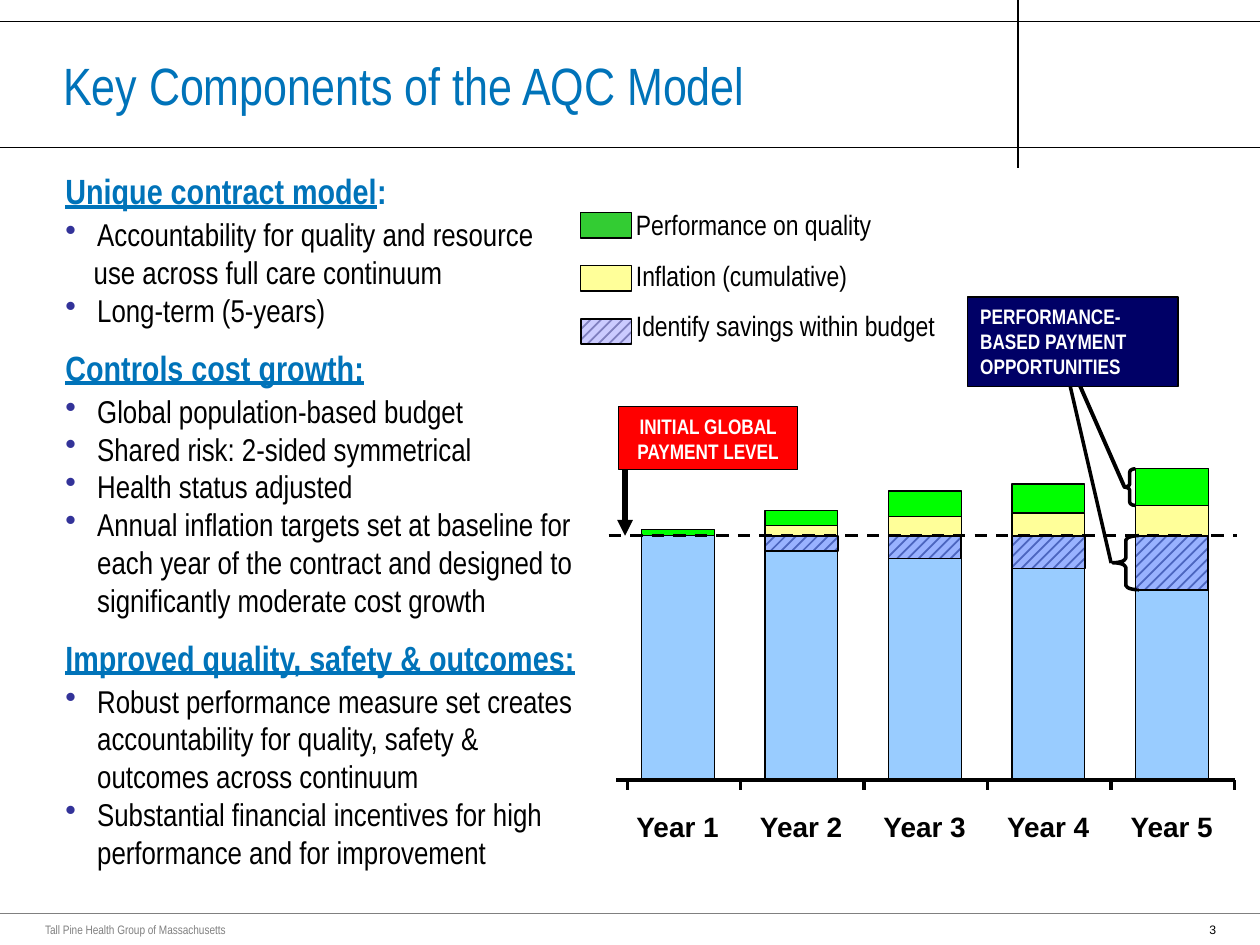
from lxml import etree
from pptx import Presentation
from pptx.dml.color import RGBColor
from pptx.enum import dml, shapes, text
from pptx.oxml.ns import qn
from pptx.util import Cm, Pt

BLACK = RGBColor(0, 0, 0)
WHITE = RGBColor(255, 255, 255)
GREY = RGBColor(128, 128, 128)
BLUE = RGBColor(0, 0x73, 0xB9)
DOT = "333399"
SKY = RGBColor(0x99, 0xCC, 0xFF)
CREAM = RGBColor(0xFF, 0xFF, 0x99)
LIME = RGBColor(0, 0xFF, 0)
GREEN = RGBColor(0x33, 0xCC, 0x33)
RED = RGBColor(0xFF, 0, 0)
NAVY = RGBColor(0, 0, 0x66)
INK = RGBColor(0, 0, 0x80)
LILAC = RGBColor(0x99, 0x99, 0xFF)
HATCH = "hatch"
THIN = "Arial Narrow"

TITLE = "Key Components of the AQC Model"
FOOT = "Tall Pine Health Group of Massachusetts"
TOPICS = [
    ("Unique contract model", ":", [
        ("•", "Accountability for quality and resource"),
        ("", "use across full care continuum"),
        ("•", "Long-term (5-years)")]),
    ("Controls cost growth:", "", [
        ("•", "Global population-based budget"),
        ("•", "Shared risk: 2-sided symmetrical"),
        ("•", "Health status adjusted"),
        ("•", "Annual inflation targets set at baseline for each year of the "
              "contract and designed to significantly moderate cost growth")]),
    ("Improved quality, safety & outcomes:", "", [
        ("•", "Robust performance measure set creates accountability for "
              "quality, safety & outcomes across continuum"),
        ("•", "Substantial financial incentives for high performance and "
              "for improvement")]),
]
LEGEND = [("Performance on quality", GREEN),
          ("Inflation (cumulative)", CREAM),
          ("Identify savings within budget", HATCH)]
YEARS = [("Year 1", 0.13, 0, 0), ("Year 2", 0.31, 0.2, 0.31),
         ("Year 3", 0.52, 0.38, 0.46), ("Year 4", 0.58, 0.46, 0.66),
         ("Year 5", 0.74, 0.61, 1.09)]
LEFT, STEP, WIDE = 12.93, 2.49, 1.47
BASE, FLOOR, END = 10.8, 15.72, 24.89

deck = Presentation()
deck.slide_width, deck.slide_height = Cm(25.4), Cm(19.05)
slide = deck.slides.add_slide(deck.slide_layouts[5])
items = slide.shapes


def rule(x1, y1, x2, y2, width=0.75, color=BLACK):
    line = items.add_connector(shapes.MSO_CONNECTOR.STRAIGHT,
                               Cm(x1), Cm(y1), Cm(x2), Cm(y2))
    line.line.color.rgb = color
    line.line.width = Pt(width)
    etree.SubElement(line.element.spPr, qn("a:effectLst"))
    return line


def shape(kind, x, y, w, h, fill=None, width=0.75):
    item = items.add_shape(kind, Cm(x), Cm(y), Cm(w), Cm(h))
    item.shadow.inherit = False
    item.line.color.rgb = BLACK
    item.line.width = Pt(width)
    if fill is None:
        item.fill.background()
    elif fill == HATCH:
        item.line.width = Pt(1)
        item.fill.patterned()
        item.fill.pattern = dml.MSO_PATTERN.PERCENT_20
        item.fill.fore_color.rgb = INK
        item.fill.back_color.rgb = LILAC
        for tint in item.element.spPr.find(qn("a:pattFill")).iter(qn("a:srgbClr")):
            etree.SubElement(tint, qn("a:alpha"), val="50000")
    else:
        item.fill.solid()
        item.fill.fore_color.rgb = fill
    return item


def rect(*args):
    return shape(shapes.MSO_SHAPE.RECTANGLE, *args)


def write(para, words, size, color, face=THIN, bold=False, under=False):
    run = para.add_run()
    run.text = words
    font = run.font
    font.size, font.name = Pt(size), face
    font.bold, font.underline = bold, under
    font.color.rgb = color


def frame(x, y, w, h, pad=None, wrap=True):
    body = items.add_textbox(Cm(x), Cm(y), Cm(w), Cm(h)).text_frame
    body.word_wrap = wrap
    if pad is not None:
        inset(body, pad)
    return body


def inset(body, pad):
    body.margin_left = body.margin_right = Cm(pad)
    body.margin_top = body.margin_bottom = Cm(pad)


def paras(body):
    yield body.paragraphs[0]
    while True:
        yield body.add_paragraph()


def indent(para, left, first=0, mark=""):
    props = para._p.get_or_add_pPr()
    props.set("marL", str(Cm(left)))
    props.set("indent", str(Cm(first)))
    if mark:
        tint = etree.SubElement(props, qn("a:buClr"))
        etree.SubElement(tint, qn("a:srgbClr"), val=DOT)
        etree.SubElement(props, qn("a:buChar"), char=mark)
    else:
        etree.SubElement(props, qn("a:buNone"))


rule(20.52, 0, 20.52, 3.38)
rule(0, 18.42, 25.4, 18.42, 0.5, GREY)
rule(0, 0.43, 25.4, 0.43)
rule(0, 2.97, 25.4, 2.97)
write(frame(24.13, 18.47, 0.86, 0.56).paragraphs[0], "3", 7, BLACK, "Arial")
write(frame(0.66, 18.47, 4.22, 0.56, wrap=False).paragraphs[0], FOOT, 7, GREY)

head = items.title
head.left, head.top, head.width, head.height = Cm(1.27), Cm(0.43), Cm(19.25), Cm(2.54)
body = head.text_frame
inset(body, 0)
body.auto_size = text.MSO_AUTO_SIZE.NONE
body.vertical_anchor = text.MSO_ANCHOR.MIDDLE
body.paragraphs[0].alignment = text.PP_ALIGN.LEFT
write(body.paragraphs[0], TITLE, 30, BLUE)

lines = paras(frame(1.07, 3.3, 11, 14.58))
for n, (name, tail, points) in enumerate(TOPICS):
    para = next(lines)
    indent(para, 0.64, -0.64)
    para.space_after = Pt(2)
    if n:
        para.space_before = Pt(10)
    write(para, name, 20, BLUE, bold=True, under=True)
    if tail:
        write(para, tail, 20, BLUE, bold=True)
    for mark, words in points:
        para = next(lines)
        indent(para, 0.64 if mark else 0.57, -0.64 if mark else 0, mark)
        write(para, words, 18, BLACK)

lines = paras(frame(12.06, 4.09, 10.39, 4.24, 0.1))
for n, (name, fill) in enumerate(LEGEND):
    para = next(lines)
    indent(para, 0.66)
    if n:
        para.space_before = Pt(9.6)
    write(para, name, 16, BLACK)
    rect(11.71, 4.29 + 1.07 * n, 1.02, 0.51, fill)

for n, (name, gain, rise, save) in enumerate(YEARS):
    x = LEFT + STEP * n
    rect(x, BASE, WIDE, FLOOR - BASE, SKY)
    if rise:
        rect(x, BASE - rise, WIDE, rise, CREAM)
    rect(x, BASE - rise - gain, WIDE, gain, LIME)
    para = frame(x - 0.12, 16.31, 1.7, 0.69, 0, False).paragraphs[0]
    para.alignment = text.PP_ALIGN.CENTER
    write(para, name, 16, BLACK, "Arial", True)

rule(12.42, FLOOR, END, FLOOR, 0)
for x in [12.65] + [END - STEP * n for n in range(5)]:
    rule(x, FLOOR, x, FLOOR + 0.21, 0)

rule(22.4, 11.35, 21.36, 6.86, 2)
rule(21.39, 6.91, 22.66, 9.8, 2.25)
for x, y, w, h, bend in [(22.66, 9.45, 0.23, 0.74, 0.28),
                         (22.43, BASE, 0.53, 1.09, 0.17)]:
    brace = shape(shapes.MSO_SHAPE.LEFT_BRACE, x, y, w, h, None, 2)
    brace.adjustments[0] = bend

dash = rule(12.27, BASE, 24.94, BASE, 1.75)
dash.line.dash_style = dml.MSO_LINE.DASH
for n, (name, gain, rise, save) in enumerate(YEARS):
    if save:
        rect(LEFT + STEP * n, BASE, WIDE, save, HATCH)

arrow = rule(12.6, 9.45, 12.6, BASE, 3)
etree.SubElement(arrow.line._get_or_add_ln(), qn("a:tailEnd"), type="triangle")
for words, x, y, w, h, fill, side, anchor in [
        ("INITIAL GLOBAL PAYMENT LEVEL", 12.47, 8.2, 3.61, 1.27, RED,
         text.PP_ALIGN.CENTER, text.MSO_ANCHOR.MIDDLE),
        ("PERFORMANCE-BASED PAYMENT OPPORTUNITIES", 19.51, 5.99, 4.24, 1.8, NAVY,
         text.PP_ALIGN.LEFT, text.MSO_ANCHOR.TOP)]:
    body = rect(x, y, w, h, fill).text_frame
    body.word_wrap = True
    body.vertical_anchor = anchor
    body.paragraphs[0].alignment = side
    write(body.paragraphs[0], words, 12, WHITE, bold=True)

deck.save("out.pptx")
